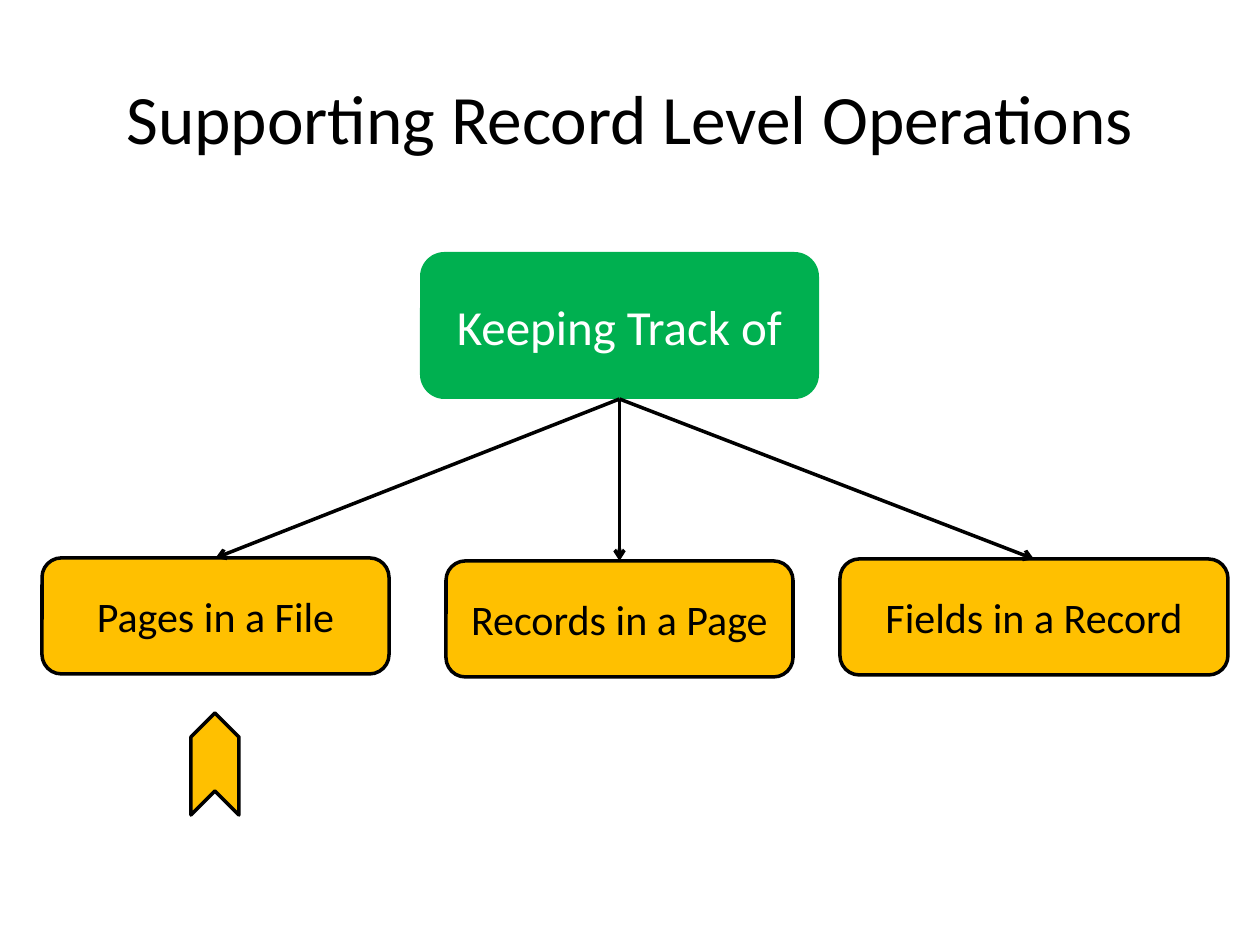
from lxml import etree
from pptx import Presentation
from pptx.dml.color import RGBColor
from pptx.enum.shapes import MSO_CONNECTOR, MSO_SHAPE
from pptx.enum.text import MSO_ANCHOR, PP_ALIGN
from pptx.oxml.ns import qn
from pptx.util import Emu, Pt

ROUNDED = MSO_SHAPE.ROUNDED_RECTANGLE
CHEVRON = MSO_SHAPE.CHEVRON
STRAIGHT = MSO_CONNECTOR.STRAIGHT
CENTER = PP_ALIGN.CENTER
MIDDLE = MSO_ANCHOR.MIDDLE
TITLE_ONLY = 5
TOP, BOTTOM = 0, 2

BLACK = RGBColor(0x00, 0x00, 0x00)
WHITE = RGBColor(0xFF, 0xFF, 0xFF)
GREEN = RGBColor(0x00, 0xB0, 0x50)
AMBER = RGBColor(0xFF, 0xC0, 0x00)

SCALE = 914400 // 126
FONT = "Calibri"
LINE_WIDTH = Pt(2)

TITLE = ("Supporting Record Level Operations", (63, 38, 1134, 157))
ROOT = ("Keeping Track of", (420, 252, 399, 147))
LEVELS = [
    ("Pages in a File", (42, 558, 347, 116)),
    ("Records in a Page", (446, 561, 347, 116)),
    ("Fields in a Record", (840, 559, 388, 116)),
]
MARKER = (164, 740, 102, 48)


def px(value):
    return Emu(value * SCALE)


def write(shape, text, size, color, inset=6):
    frame = shape.text_frame
    frame.word_wrap = True
    frame.vertical_anchor = MIDDLE
    frame.margin_top = frame.margin_bottom = px(inset)
    para = frame.paragraphs[0]
    para.alignment = CENTER
    span = para.add_run()
    span.text = text
    span.font.name = FONT
    span.font.size = Pt(size)
    span.font.color.rgb = color


def add_box(page, kind, place, fill, outline=None):
    box = page.shapes.add_shape(kind, *map(px, place))
    box.shadow.inherit = False
    box.fill.solid()
    box.fill.fore_color.rgb = fill
    if outline is None:
        box.line.fill.background()
    else:
        box.line.color.rgb = outline
        box.line.width = LINE_WIDTH
    return box


def add_arrow(page, parent, child):
    arrow = page.shapes.add_connector(STRAIGHT, 0, 0, 0, 0)
    arrow.begin_connect(parent, BOTTOM)
    arrow.end_connect(child, TOP)
    arrow.line.color.rgb = BLACK
    arrow.line.width = LINE_WIDTH
    properties = arrow._element.spPr
    etree.SubElement(properties.find(qn("a:ln")), qn("a:tailEnd"), type="arrow")
    etree.SubElement(properties, qn("a:effectLst"))


def main():
    deck = Presentation()
    deck.slide_width, deck.slide_height = px(1260), px(945)
    page = deck.slides.add_slide(deck.slide_layouts[TITLE_ONLY])

    text, place = TITLE
    title = page.shapes.title
    title.left, title.top, title.width, title.height = map(px, place)
    write(title, text, size=39.6, color=BLACK)

    text, place = ROOT
    root = add_box(page, ROUNDED, place, GREEN)
    write(root, text, size=28, color=WHITE)

    for text, place in LEVELS:
        level = add_box(page, ROUNDED, place, AMBER, outline=BLACK)
        write(level, text, size=24, color=BLACK, inset=0)
        add_arrow(page, root, level)

    marker = add_box(page, CHEVRON, MARKER, AMBER, outline=BLACK)
    marker.rotation = 270
    deck.save("out.pptx")


if __name__ == "__main__":
    main()
